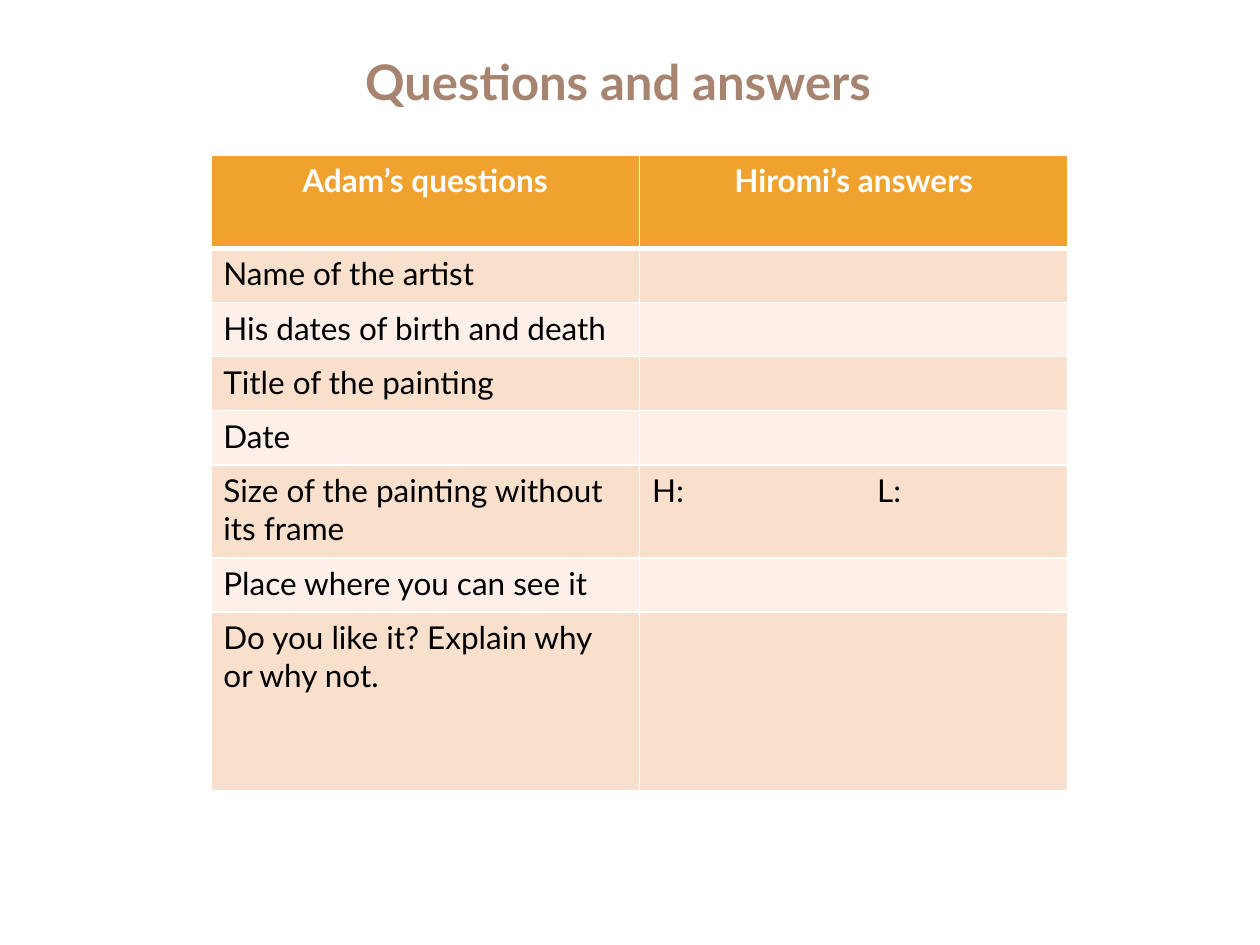
from lxml.etree import SubElement
from pptx import Presentation
from pptx.dml.color import RGBColor
from pptx.enum.text import PP_ALIGN
from pptx.oxml.ns import qn
from pptx.util import Cm, Pt

FONT = "Lato"
WHITE = RGBColor(0xFF, 0xFF, 0xFF)
BLACK = RGBColor(0x00, 0x00, 0x00)
BROWN = RGBColor(0xA7, 0x84, 0x70)
ORANGE = RGBColor(0xF0, 0xA2, 0x2E)
PEACH = RGBColor(0xF9, 0xE0, 0xCD)
PALE_PEACH = RGBColor(0xFC, 0xF0, 0xE8)

COLUMN_WIDTH = Cm(8.64)
LINE_ROW, DOUBLE_ROW, COMMENT_ROW = Cm(1.09), Cm(1.88), Cm(3.61)

# Question, answer, row height
ROWS = [
    ("Adam’s questions", "Hiromi’s answers", DOUBLE_ROW),
    ("Name of the artist", "", LINE_ROW),
    ("His dates of birth and death", "", LINE_ROW),
    ("Title of the painting", "", LINE_ROW),
    ("Date", "", LINE_ROW),
    ("Size of the painting without its frame", "H:\tL:", DOUBLE_ROW),
    ("Place where you can see it", "", LINE_ROW),
    ("Do you like it? Explain why or why not.", "", COMMENT_ROW),
]


def add_run(paragraph, text, size, color, bold=False):
    run = paragraph.add_run()
    run.text = text
    run.font.name = FONT
    run.font.size = Pt(size)
    run.font.bold = bold
    run.font.color.rgb = color


def add_tab_stop(paragraph, position):
    tab_list = SubElement(paragraph._p.get_or_add_pPr(), qn("a:tabLst"))
    SubElement(tab_list, qn("a:tab"), pos=str(position), algn="l")


def add_borders(cell, **widths):
    properties = cell._tc.get_or_add_tcPr()
    for side in "LRTB":
        width = Pt(widths.get(side, 1))
        line = SubElement(properties, qn(f"a:ln{side}"), w=str(width))
        solid = SubElement(line, qn("a:solidFill"))
        SubElement(solid, qn("a:srgbClr"), val=str(WHITE))


def style_cell(cell, row):
    # A thick rule separates the header from the body
    add_borders(cell, B=3 if row == 0 else 1, T=3 if row == 1 else 1)
    cell.fill.solid()
    if row == 0:
        cell.fill.fore_color.rgb = ORANGE
    else:
        cell.fill.fore_color.rgb = PEACH if row % 2 else PALE_PEACH


def fill_cell(cell, text, row):
    paragraph = cell.text_frame.paragraphs[0]
    if row == 0:
        paragraph.alignment = PP_ALIGN.CENTER
    if "\t" in text:
        add_tab_stop(paragraph, Cm(4.54))
    if text:
        add_run(paragraph, text, 18, WHITE if row == 0 else BLACK, row == 0)


def add_questionnaire(slide):
    total_height = sum(height for _, _, height in ROWS)
    table = slide.shapes.add_table(
        len(ROWS), 2, Cm(4.25), Cm(3.13), 2 * COLUMN_WIDTH, total_height
    ).table
    for column in table.columns:
        column.width = COLUMN_WIDTH
    for row, (question, answer, height) in enumerate(ROWS):
        table.rows[row].height = height
        for column, text in enumerate((question, answer)):
            cell = table.cell(row, column)
            style_cell(cell, row)
            fill_cell(cell, text, row)


def add_heading(slide, text):
    heading = slide.shapes.add_textbox(Cm(7.11), Cm(0.91), Cm(12.6), Cm(1.45))
    heading.text_frame.word_wrap = True
    add_run(heading.text_frame.paragraphs[0], text, 28, BROWN, True)


def main():
    presentation = Presentation()
    presentation.slide_width = Cm(25.4)
    presentation.slide_height = Cm(19.05)
    slide = presentation.slides.add_slide(presentation.slide_layouts[6])

    # Question and answer grid
    add_questionnaire(slide)

    # Slide heading
    add_heading(slide, "Questions and answers")

    presentation.save("out.pptx")


if __name__ == "__main__":
    main()
